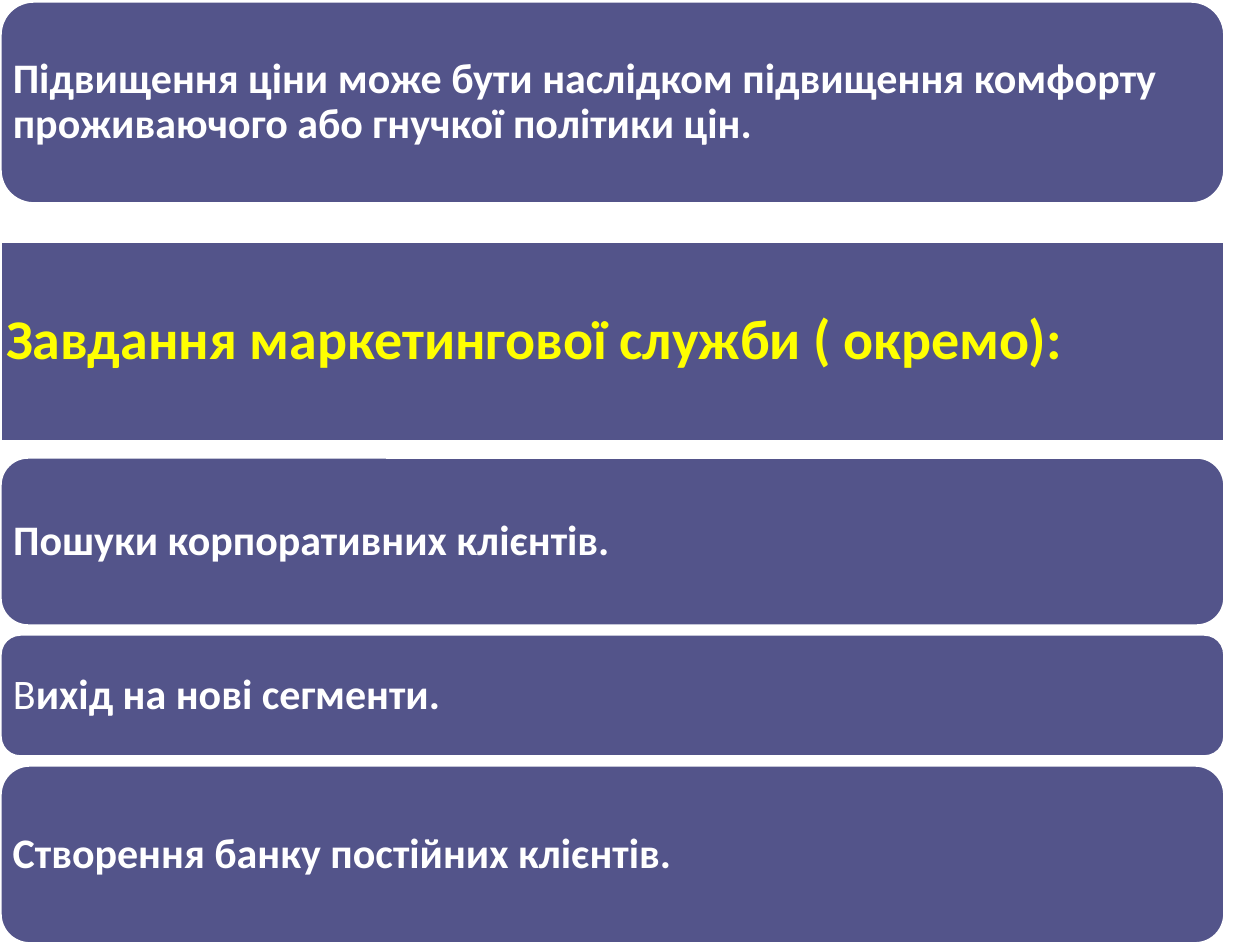
from lxml.etree import SubElement
from pptx import Presentation
from pptx.dml.color import RGBColor
from pptx.enum.shapes import MSO_SHAPE
from pptx.enum.text import MSO_ANCHOR, MSO_AUTO_SIZE, PP_ALIGN
from pptx.oxml.ns import qn
from pptx.util import Inches, Pt

PX_PER_INCH = 126
PANEL_FILL = RGBColor(0x53, 0x54, 0x8A)
WHITE = RGBColor(0xFF, 0xFF, 0xFF)
YELLOW = RGBColor(0xFF, 0xFF, 0x00)
FONT = "Calibri"
PANEL_WIDTH = 1225
CORNER = 1 / 6  # default corner radius as a share of the panel height
CORNER_INSET = 0.29  # share of the radius by which the text area shrinks

# top, height and runs (text, bold) of each body panel
BODY_PANELS = [
    (1, 203, [("Підвищення ціни може бути наслідком підвищення комфорту "
               "проживаючого або гнучкої політики цін.", True)]),
    (457, 169, [("Пошуки корпоративних клієнтів.", True)]),
    (634, 123, [("В", False), ("ихід на нові сегменти.", True)]),
    (765, 179, [("Створення банку постійних клієнтів.", True)]),
]
HEADING_TOP, HEADING_HEIGHT = 241, 201
HEADING_RUNS = [("Завдання маркетингової служби ( окремо):", True)]


def px(length):
    return Inches(length / PX_PER_INCH)


def style_panel(panel, height):
    panel.fill.solid()
    panel.fill.fore_color.rgb = PANEL_FILL
    panel.line.color.rgb = WHITE
    panel.line.width = Pt(2)


def write_text(panel, height, runs, size, color, padding):
    frame = panel.text_frame
    frame.word_wrap = True
    frame.auto_size = MSO_AUTO_SIZE.NONE
    frame.vertical_anchor = MSO_ANCHOR.MIDDLE
    # The rounded corners already push the text inwards
    inset = px(max(0, round(padding - CORNER_INSET * CORNER * height)))
    frame.margin_left = frame.margin_right = inset
    frame.margin_top = frame.margin_bottom = inset

    paragraph = frame.paragraphs[0]
    paragraph.alignment = PP_ALIGN.LEFT
    paragraph.line_spacing = 0.9
    for text, bold in runs:
        run = paragraph.add_run()
        run.text = text
        run.font.name = FONT
        run.font.size = Pt(size)
        run.font.bold = bold
        run.font.color.rgb = color


def add_body_panel(slide, top, height, runs):
    panel = slide.shapes.add_shape(
        MSO_SHAPE.ROUNDED_RECTANGLE, 0, px(top), px(PANEL_WIDTH), px(height))
    panel.shadow.inherit = False
    style_panel(panel, height)
    write_text(panel, height, runs, 24, WHITE, 13)


def place_heading(slide, top, height, runs):
    heading = slide.shapes.title
    heading.left, heading.top = 0, px(top)
    heading.width, heading.height = px(PANEL_WIDTH), px(height)
    # Give the title placeholder the same rounded outline as the panels
    outline = SubElement(heading.element.spPr, qn("a:prstGeom"), prst="roundRect")
    SubElement(outline, qn("a:avLst"))
    style_panel(heading, height)
    write_text(heading, height, runs, 32, YELLOW, 16)


def main():
    presentation = Presentation()
    presentation.slide_width, presentation.slide_height = px(1260), px(945)
    title_only = presentation.slide_layouts[5]
    slide = presentation.slides.add_slide(title_only)

    place_heading(slide, HEADING_TOP, HEADING_HEIGHT, HEADING_RUNS)
    for top, height, runs in BODY_PANELS:
        add_body_panel(slide, top, height, runs)

    presentation.save("out.pptx")


if __name__ == "__main__":
    main()
